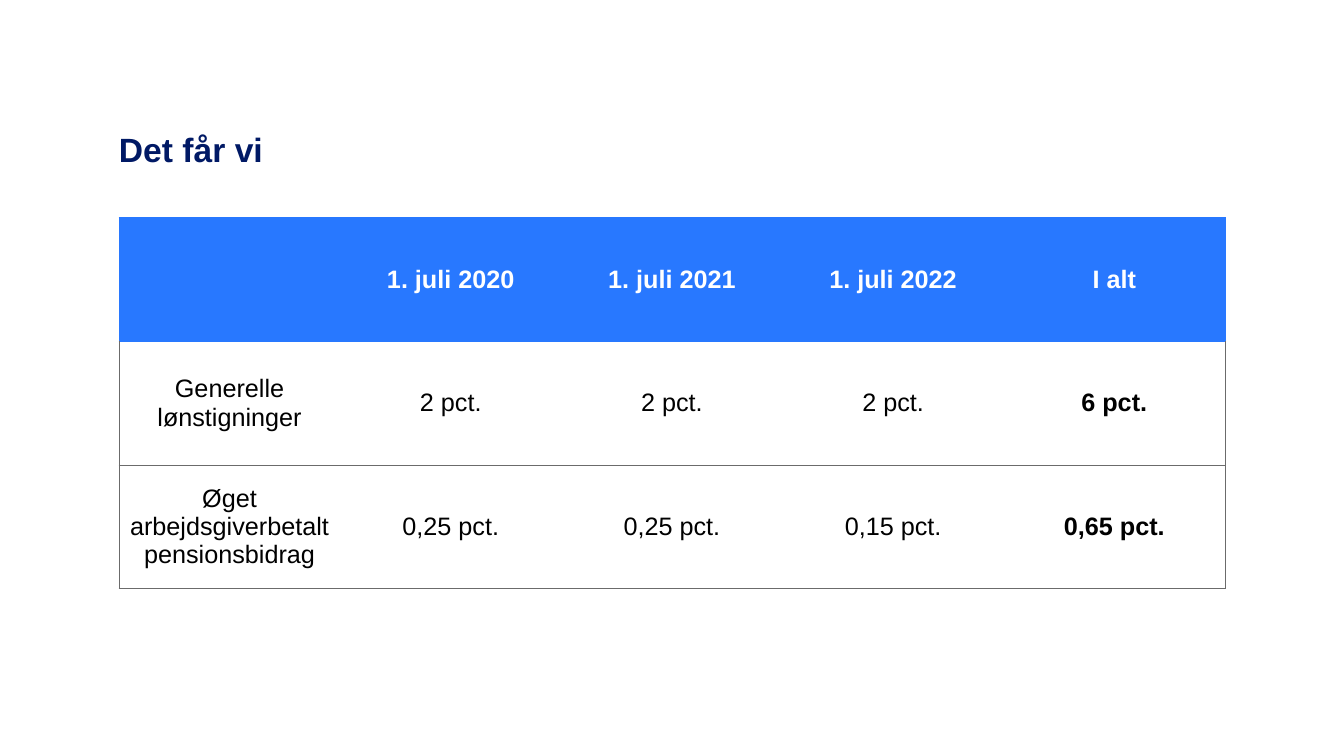
from lxml.etree import SubElement
from pptx import Presentation
from pptx.dml.color import RGBColor
from pptx.enum.text import MSO_ANCHOR, PP_ALIGN
from pptx.oxml.ns import qn
from pptx.util import Inches, Pt

NAVY = "001965"
BLUE = "2878FF"
GREY = "6B6B6B"
WHITE = "FFFFFF"
BLACK = "000000"

ROWS = [
    ["", "1. juli 2020", "1. juli 2021", "1. juli 2022", "I alt"],
    ["Generelle lønstigninger", "2 pct.", "2 pct.", "2 pct.", "6 pct."],
    ["Øget arbejdsgiverbetalt pensionsbidrag",
     "0,25 pct.", "0,25 pct.", "0,15 pct.", "0,65 pct."],
]


def color(value):
    return RGBColor.from_string(value)


def add_run(paragraph, text, size, value, bold):
    run = paragraph.add_run()
    run.text = text
    run.font.name = "Arial"
    run.font.size = Pt(size)
    run.font.bold = bold
    run.font.color.rgb = color(value)


def set_title(slide, text):
    title = slide.shapes.title
    title.left, title.top = Inches(1.18), Inches(1.18)
    title.width, title.height = Inches(8.08), Inches(0.63)
    frame = title.text_frame
    frame.word_wrap = True
    frame.vertical_anchor = MSO_ANCHOR.MIDDLE
    frame.margin_left = frame.margin_right = 0
    frame.margin_top = frame.margin_bottom = 0
    paragraph = frame.paragraphs[0]
    paragraph.alignment = PP_ALIGN.LEFT
    paragraph.line_spacing = Pt(27)
    add_run(paragraph, text, 24, NAVY, True)


def set_borders(cell, borders):
    properties = cell._tc.get_or_add_tcPr()
    for side in ("L", "R", "T", "B"):
        value = borders.get(side)
        line = SubElement(properties, qn(f"a:ln{side}"), w=str(Pt(0.5)))
        if value:
            fill = SubElement(line, qn("a:solidFill"))
            SubElement(fill, qn("a:srgbClr"), val=value)
        else:
            SubElement(line, qn("a:noFill"))


def fill_cell(cell, text, row, column):
    header = row == 0
    last_column = column == len(ROWS[0]) - 1
    edge = BLUE if header else GREY
    borders = {"T": BLUE if row <= 1 else GREY, "B": edge}
    if column == 0:
        borders["L"] = edge
    if last_column:
        borders["R"] = edge
    set_borders(cell, borders)
    if header:
        cell.fill.solid()
        cell.fill.fore_color.rgb = color(BLUE)
    else:
        cell.fill.background()
    cell.vertical_anchor = MSO_ANCHOR.MIDDLE
    if text:
        paragraph = cell.text_frame.paragraphs[0]
        paragraph.alignment = PP_ALIGN.CENTER
        add_run(paragraph, text, 18, WHITE if header else BLACK,
                header or last_column)


def add_raise_table(slide):
    table = slide.shapes.add_table(
        len(ROWS), len(ROWS[0]),
        Inches(1.18), Inches(2.16), Inches(10.97), Inches(3.68)).table
    table.horz_banding = False
    for row, texts in enumerate(ROWS):
        for column, text in enumerate(texts):
            fill_cell(table.cell(row, column), text, row, column)


def main():
    presentation = Presentation()
    presentation.slide_width = Inches(13.33)
    presentation.slide_height = Inches(7.5)
    slide = presentation.slides.add_slide(presentation.slide_layouts[5])
    set_title(slide, "Det får vi")
    add_raise_table(slide)
    presentation.save("out.pptx")


if __name__ == "__main__":
    main()
